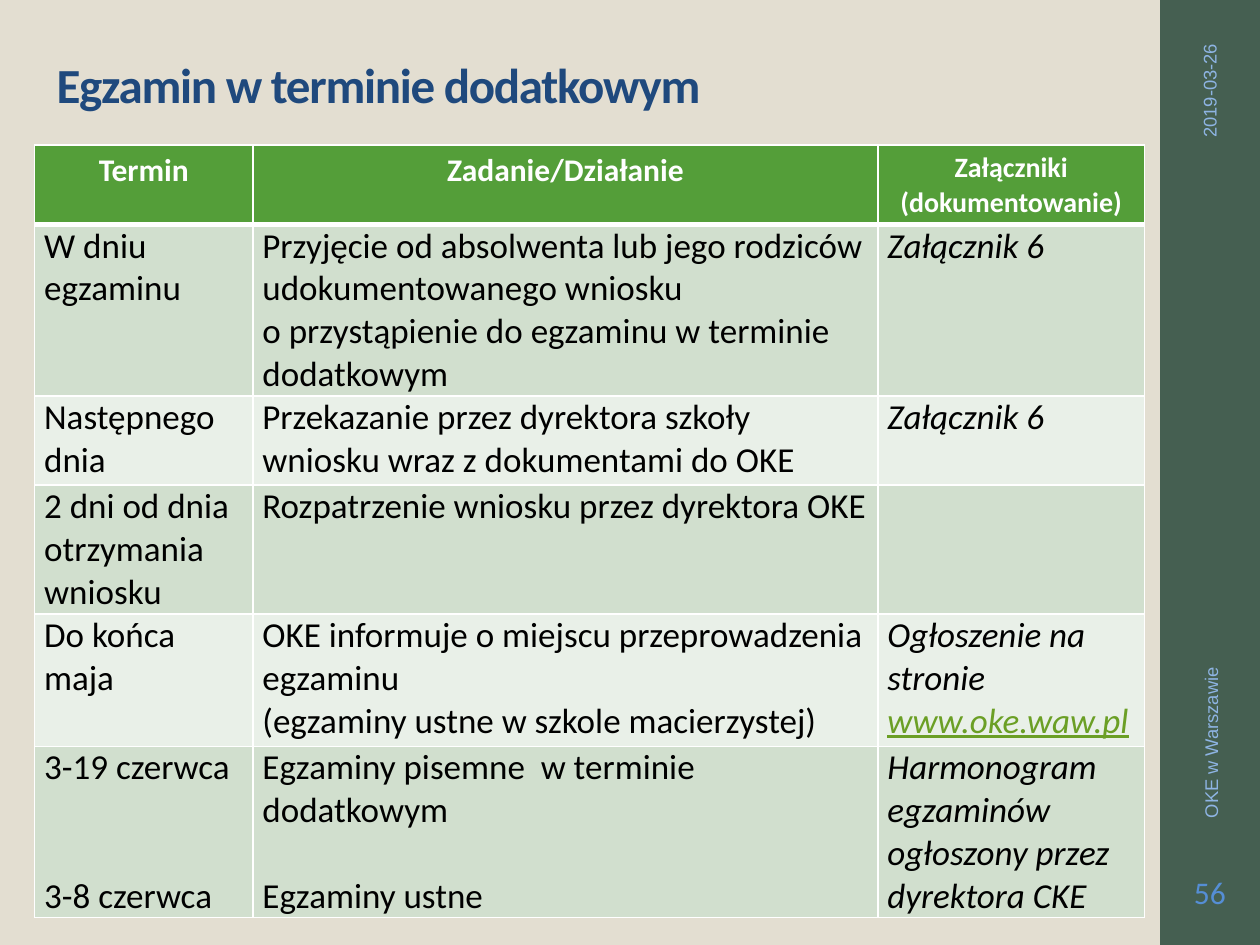
"""Build the slide with the timetable of the additional exam session."""
from dataclasses import dataclass, field

import lxml.etree
import pptx
import pptx.dml.color
import pptx.enum.shapes
import pptx.enum.text
import pptx.oxml.ns
import pptx.util

Cm = pptx.util.Cm
Pt = pptx.util.Pt
Align = pptx.enum.text.PP_ALIGN
Anchor = pptx.enum.text.MSO_ANCHOR

COLORS = {
    "background": "E3DED1", "sidebar": "455F51", "title": "1F497D",
    "header": "549E39", "odd": "D1DFCE", "even": "E9F0E8",
    "white": "FFFFFF", "black": "000000", "link": "6B9F25",
    "side_text": "8EB4E3", "number": "558ED5",
}


@dataclass
class Span:
    text: str
    color: str = "black"
    font: dict = field(default_factory=dict)


@dataclass
class Line:
    spans: list[Span]
    format: dict = field(default_factory=dict)


@dataclass
class Label:
    box: tuple[float, float, float, float]
    line: Line
    frame: dict = field(default_factory=dict)
    rotation: int = 0


def rgb(name: str) -> pptx.dml.color.RGBColor:
    """Return the named colour."""
    return pptx.dml.color.RGBColor.from_string(COLORS[name])


def apply(target, values: dict) -> None:
    """Set each format value on the target."""
    for name, value in values.items():
        setattr(target, name, value)


def paint(fill, name: str) -> None:
    """Make a fill solid in the named colour."""
    fill.solid()
    fill.fore_color.rgb = rgb(name)


def write(frame, lines: list[Line]) -> None:
    """Write lines into a text frame."""
    for index, line in enumerate(lines):
        paragraph = frame.add_paragraph() if index else frame.paragraphs[0]
        apply(paragraph, line.format)
        for span in line.spans:
            run = paragraph.add_run()
            run.text = span.text
            apply(run.font, {"name": "Calibri", "size": Pt(20)} | span.font)
            run.font.color.rgb = rgb(span.color)


def add_label(slide, label: Label):
    """Add a text box and return it."""
    box = slide.shapes.add_textbox(*map(Cm, label.box))
    box.rotation = label.rotation
    apply(box.text_frame, {"word_wrap": True, "vertical_anchor": Anchor.MIDDLE} | label.frame)
    write(box.text_frame, [label.line])
    return box


def add_borders(cell, top: float, bottom: float) -> None:
    """Draw white borders round a cell, with widths in points."""
    qn = pptx.oxml.ns.qn
    properties = cell._tc.get_or_add_tcPr()
    for side, width in {"L": 1, "R": 1, "T": top, "B": bottom}.items():
        border = lxml.etree.SubElement(properties, qn(f"a:ln{side}"), w=str(Pt(width)))
        fill = lxml.etree.SubElement(border, qn("a:solidFill"))
        lxml.etree.SubElement(fill, qn("a:srgbClr"), val=COLORS["white"])


def head(*texts: str, size: int = 18) -> list[Line]:
    """Return centred header lines."""
    font = {"size": Pt(size), "bold": True}
    return [Line([Span(text, "white", font)], {"alignment": Align.CENTER}) for text in texts]


def body(*texts: str, italic: bool = False, gap: float = 0) -> list[Line]:
    """Return body lines with a gap in points between them."""
    return [
        Line([Span(text, font={"italic": italic, "bold": False})],
             {"space_before": Pt(gap)} if index else {})
        for index, text in enumerate(texts)
    ]


LINE_HEIGHT = 24.4
ANNOUNCEMENT = body("Ogłoszenie na stronie ", italic=True)
ANNOUNCEMENT[0].spans.append(
    Span("www.oke.waw.pl", "link", {"italic": True, "underline": True, "bold": False}))

COLUMN_WIDTHS = [4.4, 12.6, 5.37]
ROW_HEIGHTS = [1.6, 3.45, 1.8, 2.6, 2.67, 3.45]
SCHEDULE = [
    [head("Termin"), head("Zadanie/Działanie"),
     head("Załączniki", "(dokumentowanie)", size=16)],
    [body("W dniu egzaminu"),
     body("Przyjęcie od absolwenta lub jego rodziców udokumentowanego wniosku",
          "o przystąpienie do egzaminu w terminie dodatkowym"),
     body("Załącznik 6", italic=True)],
    [body("Następnego dnia"),
     body("Przekazanie przez dyrektora szkoły wniosku wraz z dokumentami do OKE"),
     body("Załącznik 6", italic=True)],
    [body("2 dni od dnia otrzymania wniosku"),
     body("Rozpatrzenie wniosku przez dyrektora OKE"), []],
    [body("Do końca maja"),
     body("OKE informuje o miejscu przeprowadzenia egzaminu",
          "(egzaminy ustne w szkole macierzystej)"),
     ANNOUNCEMENT],
    [body("3-19 czerwca", "3-8 czerwca", gap=2 * LINE_HEIGHT),
     body("Egzaminy pisemne  w terminie dodatkowym", "Egzaminy ustne", gap=LINE_HEIGHT),
     body("Harmonogram egzaminów ogłoszony przez dyrektora CKE", italic=True)],
]
BODY_MARGINS = {"margin_left": Cm(0.19), "margin_right": Cm(0.19),
                "margin_top": 0, "margin_bottom": 0}

SIDE_FONT = {"name": "Arial", "size": Pt(10.5)}
TITLE = Label(
    (0.89, 0.74, 22, 1.68),
    Line([Span("Egzamin w terminie dodatkowym", "title", {"size": Pt(28), "bold": True})],
         {"line_spacing": 0.9}),
    {"vertical_anchor": Anchor.BOTTOM})
SIDE_LABELS = [
    Label((21.74, 2.9, 5.28, 0.76),
          Line([Span("2019-03-26", "side_text", SIDE_FONT)], {"alignment": Align.RIGHT}),
          rotation=270),
    Label((19.43, 11.38, 9.96, 0.76),
          Line([Span("OKE w Warszawie", "side_text", SIDE_FONT)]), rotation=270),
    Label((23.44, 17.15, 1.9, 1.65),
          Line([Span("56", "number", {"size": Pt(18)})], {"alignment": Align.CENTER}),
          {"margin_left": Cm(0.08), "margin_right": Cm(0.08)}),
]


def add_schedule(slide) -> None:
    """Add the timetable."""
    table = slide.shapes.add_table(
        len(ROW_HEIGHTS), len(COLUMN_WIDTHS), Cm(0.7), Cm(2.92),
        Cm(sum(COLUMN_WIDTHS)), Cm(sum(ROW_HEIGHTS))).table
    table.horz_banding = False
    for column, width in zip(table.columns, COLUMN_WIDTHS):
        column.width = Cm(width)
    for index, (row, height, entries) in enumerate(zip(table.rows, ROW_HEIGHTS, SCHEDULE)):
        row.height = Cm(height)
        band = "header" if index == 0 else "odd" if index % 2 else "even"
        for cell, lines in zip(row.cells, entries):
            add_borders(cell, 3 if index == 1 else 1, 3 if index == 0 else 1)
            paint(cell.fill, band)
            apply(cell, BODY_MARGINS if index else {})
            write(cell.text_frame, lines)


def main() -> None:
    """Build and save the presentation."""
    presentation = pptx.Presentation()
    apply(presentation, {"slide_width": Cm(25.4), "slide_height": Cm(19.05)})
    slide = presentation.slides.add_slide(presentation.slide_layouts[6])
    paint(slide.background.fill, "background")

    sidebar = slide.shapes.add_shape(
        pptx.enum.shapes.MSO_SHAPE.RECTANGLE, Cm(23.39), 0, Cm(2.01), Cm(19.05))
    sidebar.shadow.inherit = False
    paint(sidebar.fill, "sidebar")
    sidebar.line.fill.background()

    title = add_label(slide, TITLE)
    title.text_frame.paragraphs[0].runs[0]._r.get_or_add_rPr().set("spc", "-70")
    add_schedule(slide)
    for label in SIDE_LABELS:
        add_label(slide, label)
    presentation.save("out.pptx")


if __name__ == "__main__":
    main()
